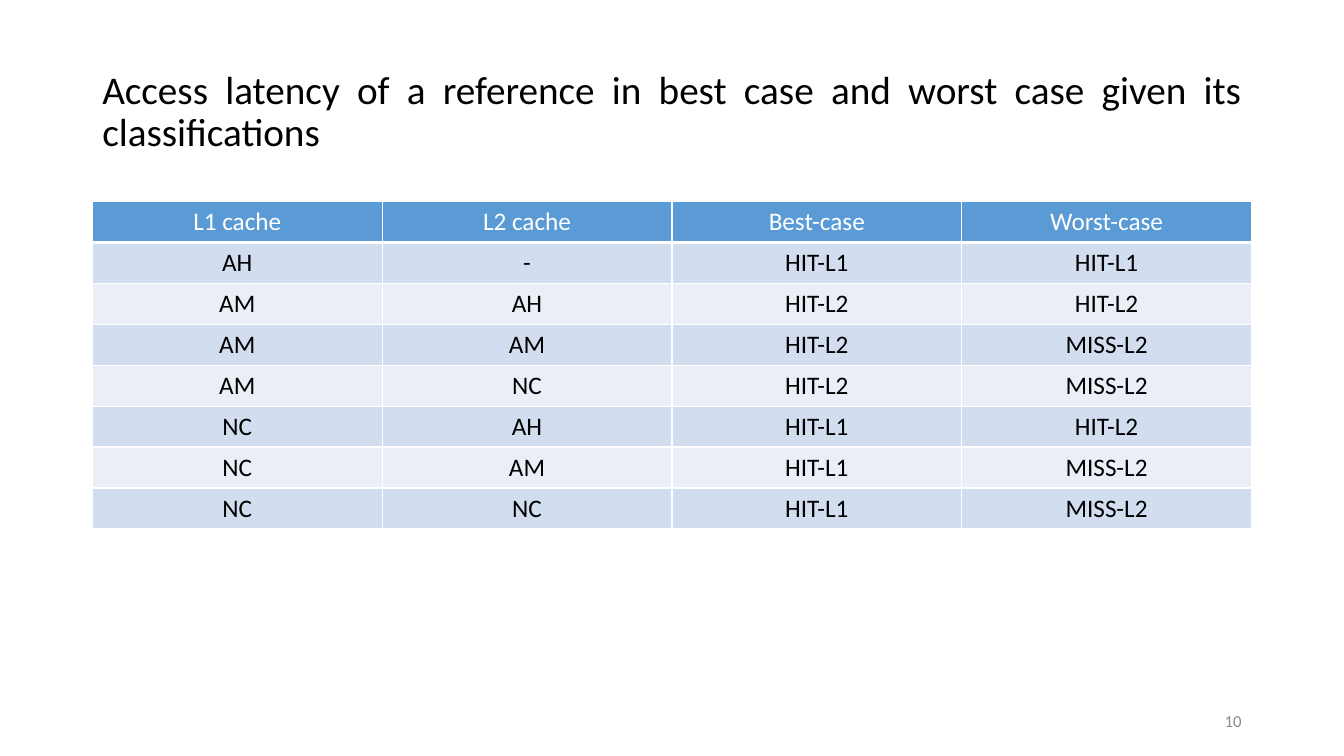
"""Build the slide on access latency by cache classification."""
from lxml.etree import SubElement
from pptx import Presentation
from pptx.dml.color import RGBColor
from pptx.enum.text import MSO_ANCHOR, PP_ALIGN
from pptx.oxml.ns import qn
from pptx.util import Pt

PX = 9525
THEME = {
    "font": "Calibri",
    "title": {"size": 28, "color": "000000"},
    "head": {"size": 18, "color": "FFFFFF"},
    "body": {"size": 18, "color": "000000"},
    "number": {"size": 12, "color": "8C8C8C"},
    "head_fill": "5B9BD5",
    "band_fills": ["EAEFF7", "D2DEEF"],
    "border": "FFFFFF",
}
ROWS = [
    ["L1 cache", "L2 cache", "Best-case", "Worst-case"],
    ["AH", "-", "HIT-L1", "HIT-L1"],
    ["AM", "AH", "HIT-L2", "HIT-L2"],
    ["AM", "AM", "HIT-L2", "MISS-L2"],
    ["AM", "NC", "HIT-L2", "MISS-L2"],
    ["NC", "AH", "HIT-L1", "HIT-L2"],
    ["NC", "AM", "HIT-L1", "MISS-L2"],
    ["NC", "NC", "HIT-L1", "MISS-L2"],
]
LEFT, WIDTH, ROW_H = 88, 1104, 39


def write(tf, text, style, align):
    p = tf.paragraphs[0]
    p.alignment = align
    r = p.add_run()
    r.text = text
    font = {"name": THEME["font"], "size": Pt(THEME[style]["size"]), "bold": False}
    for name, value in font.items():
        setattr(r.font, name, value)
    r.font.color.rgb = RGBColor.from_string(THEME[style]["color"])
    return p


def add_border(cell, side, points):
    ln = SubElement(cell._tc.get_or_add_tcPr(), qn(f"a:ln{side}"), w=str(Pt(points)))
    fill = SubElement(ln, qn("a:solidFill"))
    SubElement(fill, qn("a:srgbClr"), val=THEME["border"])


prs = Presentation()
prs.slide_width, prs.slide_height = 1280 * PX, 720 * PX
s = prs.slides.add_slide(prs.slide_layouts[6])

texts = [
    ("Access latency of a reference in best case and worst case given its classifications",
     "title", PP_ALIGN.JUSTIFY, 0.9, (LEFT, 38, WIDTH, 139)),
    ("10", "number", PP_ALIGN.RIGHT, 1.0, (904, 667, 288, 38)),
]
for text, style, align, spacing, box in texts:
    tf = s.shapes.add_textbox(*(v * PX for v in box)).text_frame
    for name, value in {"word_wrap": True, "vertical_anchor": MSO_ANCHOR.MIDDLE}.items():
        setattr(tf, name, value)
    write(tf, text, style, align).line_spacing = spacing

n_rows, n_cols = len(ROWS), len(ROWS[0])
table = s.shapes.add_table(n_rows, n_cols, LEFT * PX, 192 * PX,
                           WIDTH * PX, n_rows * ROW_H * PX).table
for i, row in enumerate(ROWS):
    style = "body" if i else "head"
    color = THEME["band_fills"][i % 2] if i else THEME["head_fill"]
    borders = {"L": 1, "R": 1, "T": 3 if i == 1 else 1, "B": 1 if i else 3}
    for j, text in enumerate(row):
        cell = table.cell(i, j)
        write(cell.text_frame, text, style, PP_ALIGN.CENTER)
        for side, points in borders.items():
            add_border(cell, side, points)
        cell.fill.solid()
        cell.fill.fore_color.rgb = RGBColor.from_string(color)

prs.save("out.pptx")
